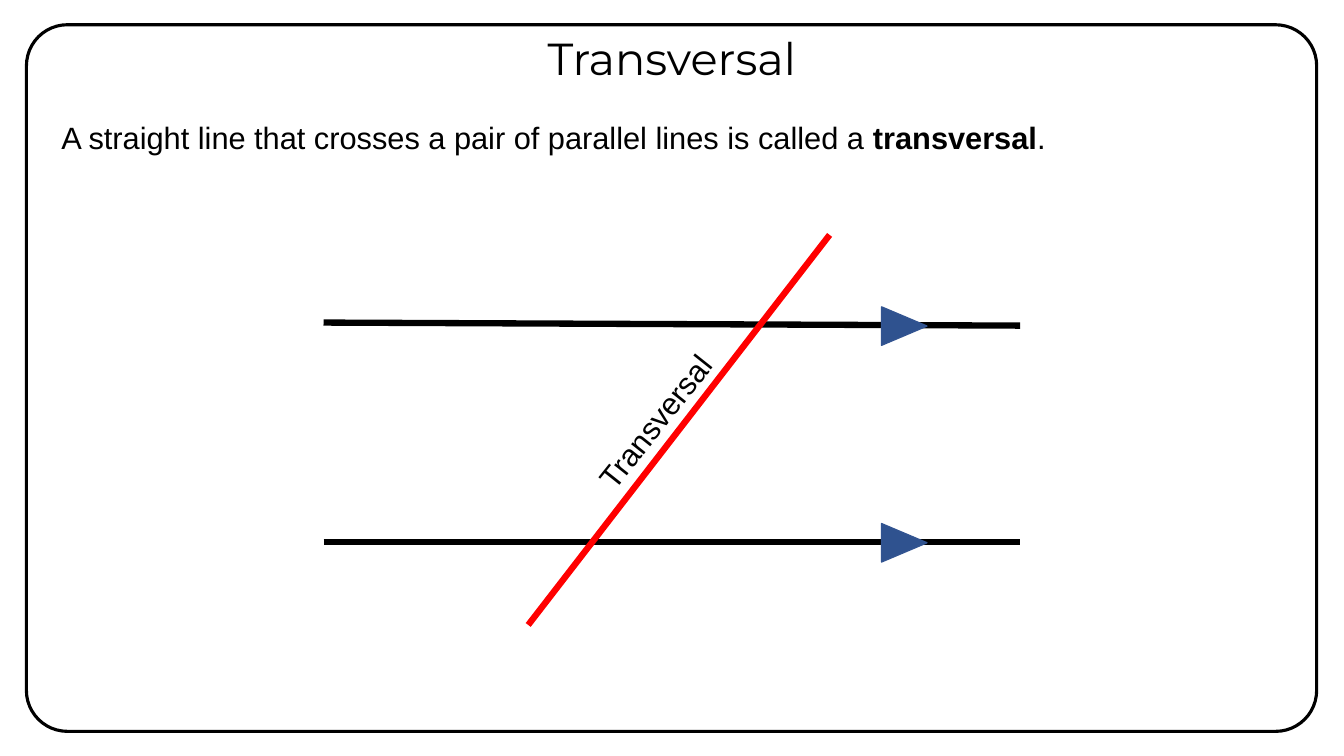
"""Build a slide that defines a transversal across two parallel lines."""
from dataclasses import dataclass

import pptx
import pptx.dml.color
import pptx.enum.shapes
import pptx.enum.text
import pptx.oxml.ns
import pptx.util

Pt = pptx.util.Pt
SHAPE = pptx.enum.shapes.MSO_SHAPE
ALIGN = pptx.enum.text.PP_ALIGN
BLACK, WHITE, RED = "000000", "FFFFFF", "FF0000"


@dataclass
class Line:
    x1: float
    y1: float
    x2: float
    y2: float
    color: str = BLACK


@dataclass
class Shape:
    kind: SHAPE
    x: float
    y: float
    w: float
    h: float
    fill: str
    line: str
    weight: float
    rotation: float = 0


@dataclass
class Label:
    x: float
    y: float
    w: float
    h: float
    runs: list[tuple[str, bool]]
    size: float = 22
    font: str = "Arial"
    align: ALIGN = ALIGN.LEFT
    rotation: float = 0


def rgb(value: str) -> pptx.dml.color.RGBColor:
    return pptx.dml.color.RGBColor.from_string(value)


def apply(target, formats: dict) -> None:
    for name, value in formats.items():
        setattr(target, name, value)


def add_line(s, line: Line) -> None:
    sp = s.shapes.add_connector(
        pptx.enum.shapes.MSO_CONNECTOR.STRAIGHT,
        Pt(line.x1), Pt(line.y1), Pt(line.x2), Pt(line.y2))
    sp.line.color.rgb = rgb(line.color)
    sp.line.width = Pt(4.5)
    effects = pptx.oxml.ns.qn("a:effectLst")
    sp._element.spPr.append(sp._element.spPr.makeelement(effects, {}))


def add_shape(s, shape: Shape):
    sp = s.shapes.add_shape(
        shape.kind, Pt(shape.x), Pt(shape.y), Pt(shape.w), Pt(shape.h))
    sp.shadow.inherit = False
    sp.rotation = shape.rotation
    sp.fill.solid()
    sp.fill.fore_color.rgb = rgb(shape.fill)
    sp.line.color.rgb = rgb(shape.line)
    sp.line.width = Pt(shape.weight)
    return sp


def add_label(s, label: Label):
    sp = s.shapes.add_textbox(
        Pt(label.x), Pt(label.y), Pt(label.w), Pt(label.h))
    sp.rotation = label.rotation
    tf = sp.text_frame
    apply(tf, {"word_wrap": True,
               "auto_size": pptx.enum.text.MSO_AUTO_SIZE.SHAPE_TO_FIT_TEXT})
    p = tf.paragraphs[0]
    p.alignment = label.align
    for text, bold in label.runs:
        r = p.add_run()
        r.text = text
        apply(r.font, {"name": label.font, "size": Pt(label.size), "bold": bold})
        r.font.color.rgb = rgb(BLACK)
    return sp


def main() -> None:
    prs = pptx.Presentation()
    apply(prs, {"slide_width": Pt(960), "slide_height": Pt(540)})
    s = prs.slides.add_slide(prs.slide_layouts[6])

    frame = add_shape(s, Shape(SHAPE.ROUNDED_RECTANGLE, 18.9, 17.7, 921.6, 504.7,
                               WHITE, BLACK, 2.25))
    frame.adjustments[0] = 0.058

    add_label(s, Label(286.6, 18.7, 386.6, 46.1, [("Transversal", False)],
                       32, "Montserrat", ALIGN.CENTER))
    definition = add_label(s, Label(36.7, 81.4, 739.4, 33.8, [
        ("A straight line that crosses a pair of parallel lines is called a ", False),
        ("transversal", True),
        (".", False)]))
    definition.fill.solid()
    definition.fill.fore_color.rgb = rgb(WHITE)

    for left_y, right_y, arrow_y in ((230.4, 232.6, 216.7), (387.4, 387.4, 371.5)):
        add_line(s, Line(231.1, left_y, 728.6, right_y))
        add_shape(s, Shape(SHAPE.ISOSCELES_TRIANGLE, 632.2, arrow_y, 27.4, 32.4,
                           "2F528F", "325491", 1, 90))

    add_line(s, Line(377.3, 446.4, 592.6, 167.8, RED))
    add_label(s, Label(403.2, 283, 131, 33.8, [("Transversal", False)],
                       rotation=308.5))
    prs.save("out.pptx")


if __name__ == "__main__":
    main()
